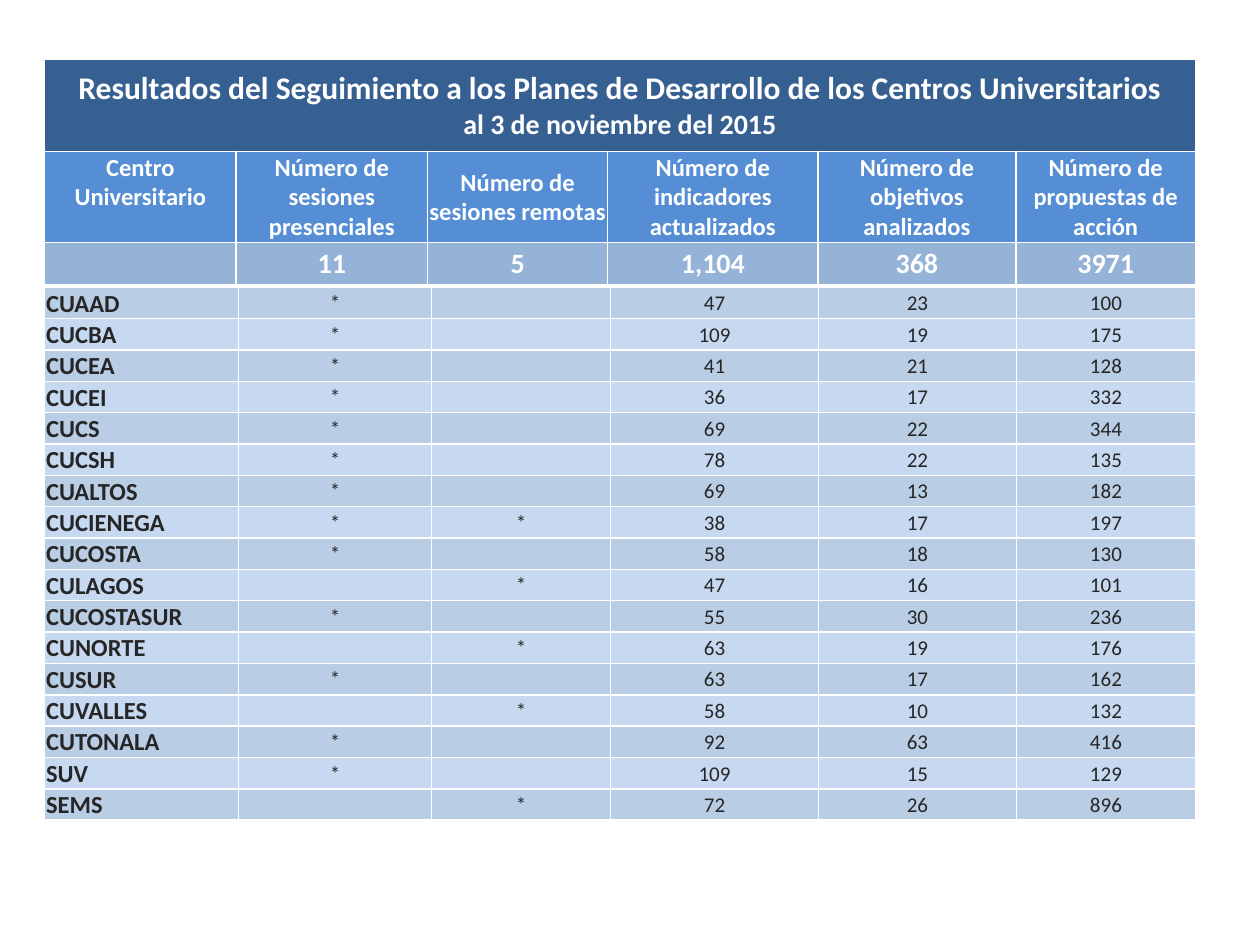
import pptx
import pptx.dml.color
import pptx.enum.text
import pptx.oxml.ns
import pptx.util
import lxml.etree
from dataclasses import dataclass

Cm = pptx.util.Cm
Anchor = pptx.enum.text.MSO_ANCHOR
Align = pptx.enum.text.PP_ALIGN
qn = pptx.oxml.ns.qn


@dataclass(frozen=True)
class Theme:
    font: str = "Calibri"
    white: str = "FFFFFF"
    ink: str = "262626"
    title_fill: str = "376092"
    heading_fill: str = "558ED5"
    total_fill: str = "95B3D7"
    bands: tuple = ("B9CDE5", "C6D9F1")
    title_size: int = 18
    subtitle_size: int = 16
    label_size: int = 14
    value_size: int = 12


class SlideBuilder:
    def __init__(self, slide, theme):
        self.slide = slide
        self.theme = theme

    def table(self, left, top, widths, heights):
        grid = self.slide.shapes.add_table(
            len(heights), len(widths), Cm(left), Cm(top), Cm(sum(widths)), Cm(sum(heights))
        ).table
        grid.first_row = False
        grid.horz_banding = False
        for column, width in zip(grid.columns, widths):
            column.width = Cm(width)
        for row, height in zip(grid.rows, heights):
            row.height = Cm(height)
        return grid

    def borders(self, cell):
        properties = cell._tc.get_or_add_tcPr()
        for side in ("lnL", "lnR", "lnT", "lnB"):
            line = lxml.etree.SubElement(properties, qn(f"a:{side}"), w="12700")
            fill = lxml.etree.SubElement(line, qn("a:solidFill"))
            lxml.etree.SubElement(fill, qn("a:srgbClr"), val=self.theme.white)

    def cell(self, cell, text, fill, sizes, color, bold=True,
             align=Align.CENTER, anchor=Anchor.MIDDLE):
        self.borders(cell)
        cell.fill.solid()
        cell.fill.fore_color.rgb = pptx.dml.color.RGBColor.from_string(fill)
        cell.margin_left = cell.margin_right = cell.margin_top = Cm(0.03)
        cell.margin_bottom = 0
        cell.vertical_anchor = anchor
        cell.text_frame.text = text
        for paragraph, size in zip(cell.text_frame.paragraphs, sizes):
            paragraph.alignment = align
            for run in paragraph.runs:
                run.font.name = self.theme.font
                run.font.size = pptx.util.Pt(size)
                run.font.bold = bold
                run.font.color.rgb = pptx.dml.color.RGBColor.from_string(color)
            if not paragraph.runs:
                lxml.etree.SubElement(paragraph._p, qn("a:endParaRPr"), sz=str(size * 100))


TITLE = (
    "Resultados del Seguimiento a los Planes de Desarrollo de los Centros Universitarios\n"
    "al 3 de noviembre del 2015"
)
HEADINGS = (
    "Centro Universitario",
    "Número de sesiones presenciales",
    "Número de sesiones remotas",
    "Número de indicadores actualizados",
    "Número de objetivos analizados",
    "Número de propuestas de acción",
)
TOTALS = ("", "11", "5", "1,104", "368", "3971")
CENTERS = (
    ("CUAAD", "*", "", 47, 23, 100),
    ("CUCBA", "*", "", 109, 19, 175),
    ("CUCEA", "*", "", 41, 21, 128),
    ("CUCEI", "*", "", 36, 17, 332),
    ("CUCS", "*", "", 69, 22, 344),
    ("CUCSH", "*", "", 78, 22, 135),
    ("CUALTOS", "*", "", 69, 13, 182),
    ("CUCIENEGA", "*", "*", 38, 17, 197),
    ("CUCOSTA", "*", "", 58, 18, 130),
    ("CULAGOS", "", "*", 47, 16, 101),
    ("CUCOSTASUR", "*", "", 55, 30, 236),
    ("CUNORTE", "", "*", 63, 19, 176),
    ("CUSUR", "*", "", 63, 17, 162),
    ("CUVALLES", "", "*", 58, 10, 132),
    ("CUTONALA", "*", "", 92, 63, 416),
    ("SUV", "*", "", 109, 15, 129),
    ("SEMS", "", "*", 72, 26, 896),
)


def add_summary(builder):
    theme = builder.theme
    summary = builder.table(0.9, 1.2, (3.86, 3.86, 3.63, 4.24, 3.99, 3.62), (1.85, 1.83, 0.86))
    summary.cell(0, 0).merge(summary.cell(0, len(HEADINGS) - 1))
    builder.cell(summary.cell(0, 0), TITLE, theme.title_fill,
                 (theme.title_size, theme.subtitle_size), theme.white)
    for column, (heading, total) in enumerate(zip(HEADINGS, TOTALS)):
        builder.cell(summary.cell(1, column), heading, theme.heading_fill,
                     (theme.label_size,), theme.white,
                     anchor=Anchor.MIDDLE if column else Anchor.TOP)
        builder.cell(summary.cell(2, column), total, theme.total_fill,
                     (theme.subtitle_size,), theme.white)


def add_centers(builder):
    theme = builder.theme
    results = builder.table(0.9, 5.79, (3.91, 3.89, 3.61, 4.19, 3.99, 3.61),
                            (0.63,) * len(CENTERS))
    for row, (center, *values) in enumerate(CENTERS):
        band = theme.bands[row % 2]
        builder.cell(results.cell(row, 0), center, band, (theme.label_size,), theme.ink,
                     align=Align.LEFT, anchor=Anchor.BOTTOM)
        for column, value in enumerate(values, 1):
            builder.cell(results.cell(row, column), str(value), band,
                         (theme.value_size,), theme.ink, bold=False)


def main():
    presentation = pptx.Presentation()
    presentation.slide_width = Cm(25.4)
    presentation.slide_height = Cm(19.05)
    slide = presentation.slides.add_slide(presentation.slide_layouts[6])
    builder = SlideBuilder(slide, Theme())
    add_summary(builder)
    add_centers(builder)
    presentation.save("out.pptx")


if __name__ == "__main__":
    main()
